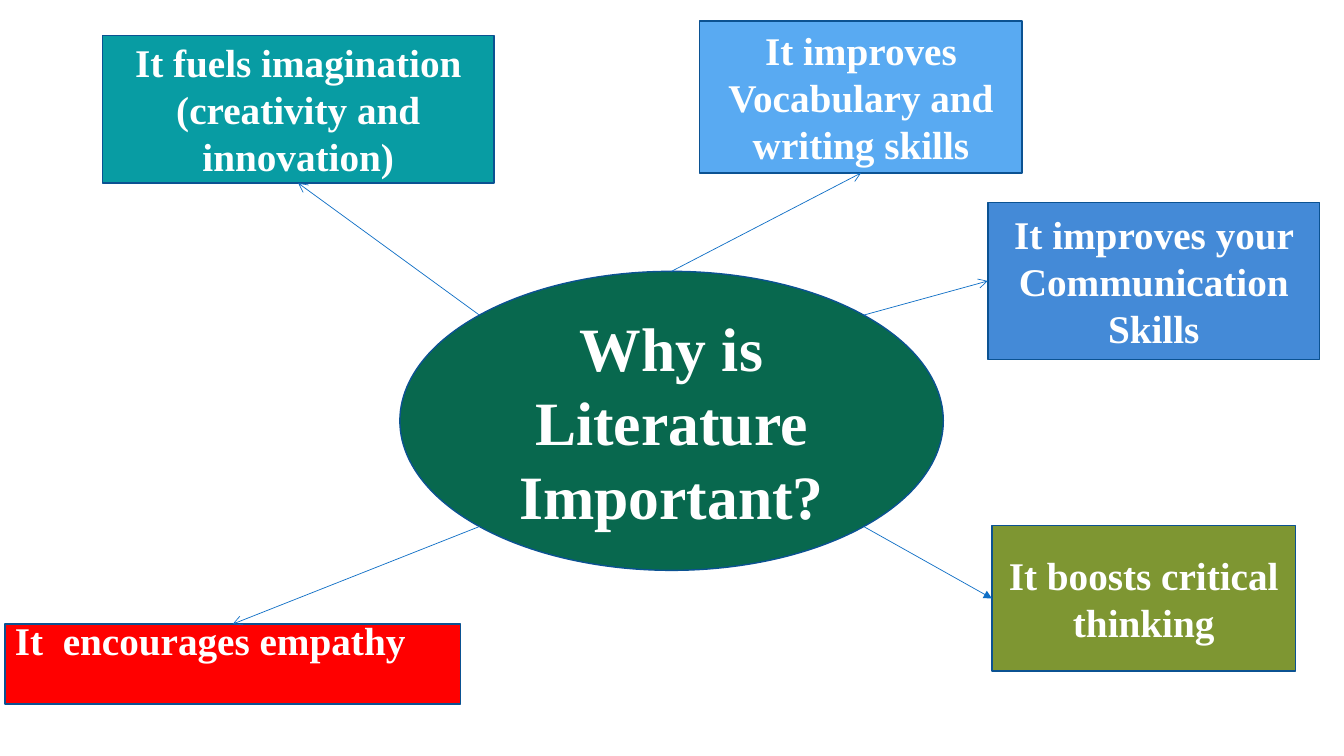
from dataclasses import dataclass
from math import cos, radians, sin

from lxml import etree
from pptx import Presentation
from pptx.dml.color import RGBColor
from pptx.enum.shapes import MSO_CONNECTOR, MSO_SHAPE
from pptx.enum.text import MSO_ANCHOR, MSO_AUTO_SIZE, PP_ALIGN
from pptx.oxml.ns import qn
from pptx.util import Inches, Pt

ELLIPSE, RECT = MSO_SHAPE.OVAL, MSO_SHAPE.RECTANGLE
STRAIGHT = MSO_CONNECTOR.STRAIGHT
MIDDLE, NO_FIT = MSO_ANCHOR.MIDDLE, MSO_AUTO_SIZE.NONE
LEFT, CENTER = PP_ALIGN.LEFT, PP_ALIGN.CENTER
TOP_SITE, LEFT_SITE, BOTTOM_SITE = 0, 1, 2
TITLE_ONLY = 5
WIDTH, HEIGHT = Inches(13.33), Inches(7.5)
COLUMNS, ROWS = 16, 9


@dataclass(frozen=True)
class Theme:
    """Colours, font and sizes of the mind map."""
    font: str = "Times New Roman"
    title_size: int = 44
    reason_size: int = 28
    text: str = "FFFFFF"
    outline: str = "0B5292"
    arrow: str = "0F6FC6"
    hub: str = "08684E"
    teal: str = "089CA3"
    sky: str = "59AAF2"
    blue: str = "448AD7"
    red: str = "FF0000"
    olive: str = "7E9632"


THEME = Theme()
HUB = (4.76, 3.23, 6.47, 3.56)
REASONS = [
    ("It fuels imagination\n(creativity and innovation)", (1.22, 0.42, 4.66, 1.76),
     THEME.teal, CENTER, 225, BOTTOM_SITE, "arrow"),
    ("It improves Vocabulary and writing skills", (8.33, 0.25, 3.84, 1.81),
     THEME.sky, CENTER, 270, BOTTOM_SITE, "arrow"),
    ("It improves your Communication Skills", (11.76, 2.41, 3.95, 1.87),
     THEME.blue, CENTER, 315, LEFT_SITE, "arrow"),
    ("It  encourages empathy", (0.06, 7.43, 5.42, 0.95),
     THEME.red, LEFT, 135, TOP_SITE, "arrow"),
    ("It boosts critical thinking", (11.81, 6.26, 3.61, 1.73),
     THEME.olive, CENTER, 45, LEFT_SITE, "triangle"),
]


def grid(x, y, w, h):
    """Turn columns and rows into slide lengths."""
    col, row = WIDTH / COLUMNS, HEIGHT / ROWS
    return int(x * col), int(y * row), int(w * col), int(h * row)


def write(shape, text, size, align):
    """Put bold text in the middle of a shape."""
    tf = shape.text_frame
    tf.text = text
    tf.word_wrap = True
    tf.auto_size = NO_FIT
    tf.vertical_anchor = MIDDLE
    for p in tf.paragraphs:
        p.alignment = align
        p.font.name = THEME.font
        p.font.size = Pt(size)
        p.font.bold = True
        p.font.color.rgb = RGBColor.from_string(THEME.text)


def add_block(s, kind, box, fill):
    """Add a filled, outlined shape."""
    shape = s.shapes.add_shape(kind, *grid(*box))
    shape.shadow.inherit = False
    shape.fill.solid()
    shape.fill.fore_color.rgb = RGBColor.from_string(fill)
    shape.line.color.rgb = RGBColor.from_string(THEME.outline)
    shape.line.width = Pt(1)
    return shape


def add_hub(s):
    """Add the central ellipse and set the title in its inner rectangle."""
    add_block(s, ELLIPSE, HUB, THEME.hub)
    x, y, w, h = HUB
    inner = cos(radians(45))
    title = s.shapes.title
    title.left, title.top, title.width, title.height = grid(
        x + w * (1 - inner) / 2, y + h * (1 - inner) / 2, w * inner, h * inner)
    write(title, "Why is Literature Important?", THEME.title_size, CENTER)
    s.shapes._spTree.append(title._element)


def add_arrow(s, angle, target, site, head):
    """Draw an arrow from the hub's rim at an angle to a side of the target."""
    x, y, w, h = grid(*HUB)
    start_x = int(x + w / 2 * (1 + cos(radians(angle))))
    start_y = int(y + h / 2 * (1 + sin(radians(angle))))
    line = s.shapes.add_connector(STRAIGHT, start_x, start_y, start_x, start_y)
    line.end_connect(target, site)
    line.line.color.rgb = RGBColor.from_string(THEME.arrow)
    line.line.width = Pt(0.5)
    etree.SubElement(line.line._get_or_add_ln(), qn("a:tailEnd"), type=head)
    etree.SubElement(line._element.spPr, qn("a:effectLst"))


def add_reason(s, text, box, fill, align, angle, site, head):
    """Add a reason box and the arrow that leads to it."""
    shape = add_block(s, RECT, box, fill)
    write(shape, text, THEME.reason_size, align)
    if align == LEFT:
        shape.text_frame.margin_bottom = Inches(0.52)
    add_arrow(s, angle, shape, site, head)


def main():
    """Build and save the mind map slide."""
    prs = Presentation()
    prs.slide_width, prs.slide_height = WIDTH, HEIGHT
    s = prs.slides.add_slide(prs.slide_layouts[TITLE_ONLY])
    add_hub(s)
    for reason in REASONS:
        add_reason(s, *reason)
    prs.save("out.pptx")


if __name__ == "__main__":
    main()
